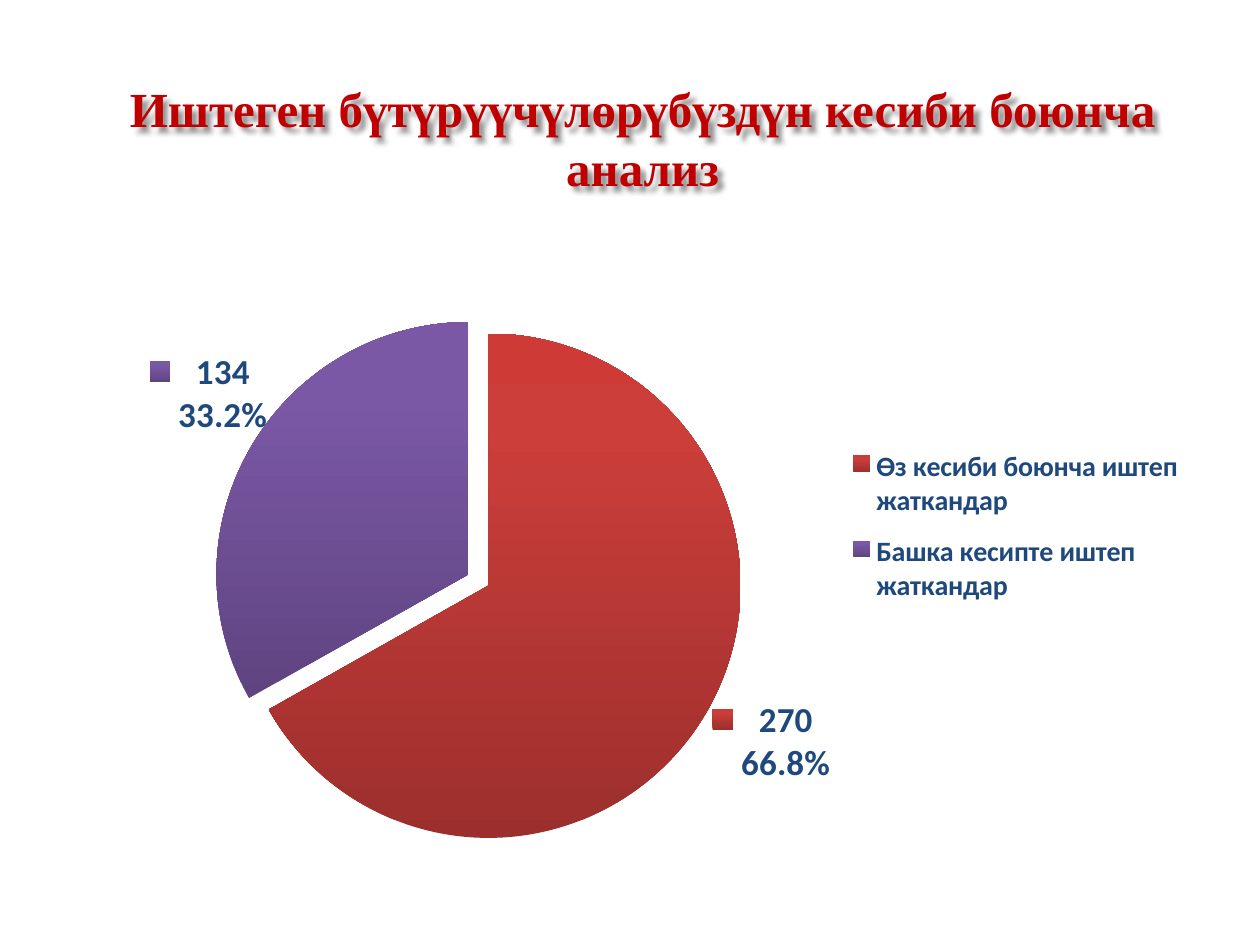
from copy import deepcopy

from pptx import Presentation
from pptx.chart.data import CategoryChartData
from pptx.dml.color import RGBColor
from pptx.enum.chart import XL_CHART_TYPE, XL_LABEL_POSITION, XL_LEGEND_POSITION
from pptx.enum.text import MSO_ANCHOR, PP_ALIGN
from pptx.oxml import parse_xml
from pptx.oxml.ns import nsdecls, qn
from pptx.util import Inches, Pt

RED = RGBColor(0xC0, 0x00, 0x00)
NAVY = RGBColor(0x1F, 0x49, 0x7D)
RED_SLICE = (RGBColor(0x9C, 0x2F, 0x2D), RGBColor(0xCB, 0x3E, 0x3A), RGBColor(0xCE, 0x3B, 0x37))
PURPLE_SLICE = (RGBColor(0x5F, 0x44, 0x80), RGBColor(0x7B, 0x58, 0xA6), RGBColor(0x7C, 0x57, 0xA8))
GRADIENT_POSITIONS = (0, 0.8, 1)
LABEL_OFFSETS = ((0, -0.03), (0.02, -0.01))
SHADOW = (
    f'<a:effectLst {nsdecls("a")}><a:outerShdw blurRad="38100" dist="38100" dir="2700000" algn="tl">'
    '<a:srgbClr val="000000"><a:alpha val="43000"/></a:srgbClr></a:outerShdw></a:effectLst>'
)


def format_font(font, size, color, name="Calibri"):
    font.size, font.bold, font.name = Pt(size), True, name
    font.color.rgb = color


def write_text(frame, text, size, color, name):
    paragraph = frame.paragraphs[0]
    paragraph.alignment = PP_ALIGN.CENTER
    run = paragraph.add_run()
    run.text = text
    format_font(run.font, size, color, name)


def make_layout(**settings):
    values = "".join(f'<c:{name} val="{value}"/>' for name, value in settings.items())
    return parse_xml(f'<c:layout {nsdecls("c")}><c:manualLayout>{values}</c:manualLayout></c:layout>')


def place_part(part, index, x, y, w, h, **target):
    for old_layout in part.findall(qn("c:layout")):
        part.remove(old_layout)
    part.insert(index, make_layout(**target, xMode="edge", yMode="edge", x=x, y=y, w=w, h=h))


class SlideBuilder:
    """Adds styled elements to one slide, placed by shares of its size."""

    def __init__(self, presentation):
        self.width, self.height = presentation.slide_width, presentation.slide_height
        self.slide = presentation.slides.add_slide(presentation.slide_layouts[5])

    def box(self, left, top, width, height):
        return (int(left * self.width), int(top * self.height),
                int(width * self.width), int(height * self.height))

    def title(self, text, *shares):
        shape = self.slide.shapes.title
        shape.left, shape.top, shape.width, shape.height = self.box(*shares)
        frame = shape.text_frame
        frame.word_wrap, frame.vertical_anchor = True, MSO_ANCHOR.MIDDLE
        frame.margin_left = frame.margin_right = Inches(0.12)
        frame.margin_top = frame.margin_bottom = Inches(0.06)
        write_text(frame, text, size=28, color=RED, name="Times New Roman")
        shape._element.spPr.append(parse_xml(SHADOW))

    def pie(self, values, slice_colors, *shares):
        data = CategoryChartData()
        data.categories = values.keys()
        data.add_series("Series 1", values.values())
        chart = self.slide.shapes.add_chart(XL_CHART_TYPE.PIE, *self.box(*shares), data).chart
        chart.has_title = False
        format_font(chart.font, 32, NAVY)
        chart.plots[0].vary_by_categories = True
        series = chart.plots[0].series[0]
        for index, colors in enumerate(slice_colors):
            self.color_slice(series.points[index], colors)
        last_slice = series._element.findall(qn("c:dPt"))[-1]
        explosion = parse_xml(f'<c:explosion {nsdecls("c")} val="9"/>')
        last_slice.find(qn("c:spPr")).addprevious(explosion)
        self.label_slices(series.data_labels)
        self.add_legend(chart)
        plot_area = chart._chartSpace.chart.plotArea
        place_part(plot_area, 0, 0.14, 0.11, 0.44, 0.81, layoutTarget="inner")

    def color_slice(self, point, colors):
        fill = point.format.fill
        fill.gradient()
        fill.gradient_angle = 90
        last_stop = fill.gradient_stops[1]._gs
        last_stop.addnext(deepcopy(last_stop))
        for stop, position, color in zip(fill.gradient_stops, GRADIENT_POSITIONS, colors):
            stop.position, stop.color.rgb = position, color

    def label_slices(self, labels):
        format_font(labels.font, 20, NAVY)
        labels.number_format, labels.number_format_is_linked = "0.0%", False
        labels.position = XL_LABEL_POSITION.OUTSIDE_END
        labels.show_value = labels.show_percentage = labels.show_legend_key = True
        group = labels._element
        separator = parse_xml(f'<c:separator {nsdecls("c")}>\n</c:separator>')
        group.find(qn("c:showBubbleSize")).addnext(separator)
        shared = [child for child in group if child.tag != qn("c:showLeaderLines")]
        for index, (x, y) in enumerate(LABEL_OFFSETS):
            label = parse_xml(f'<c:dLbl {nsdecls("c")}><c:idx val="{index}"/></c:dLbl>')
            label.append(make_layout(x=x, y=y))
            label.extend(deepcopy(child) for child in shared)
            group.insert(index, label)

    def add_legend(self, chart):
        chart.has_legend = True
        legend = chart.legend
        legend.position, legend.include_in_layout = XL_LEGEND_POSITION.RIGHT, False
        format_font(legend.font, 16, NAVY)
        place_part(legend._element, 1, 0.66, 0.27, 0.32, 0.3)


def main():
    presentation = Presentation()
    presentation.slide_width, presentation.slide_height = Inches(10), Inches(7.5)
    builder = SlideBuilder(presentation)
    builder.title("Иштеген бүтүрүүчүлөрүбүздүн кесиби боюнча анализ", 0.05, 0.04, 0.92, 0.21)
    builder.pie(
        {"Өз кесиби боюнча иштеп жаткандар": 270, "Башка кесипте иштеп жаткандар": 134},
        (RED_SLICE, PURPLE_SLICE), 0.06, 0.28, 0.91, 0.66,
    )
    presentation.save("out.pptx")


if __name__ == "__main__":
    main()
